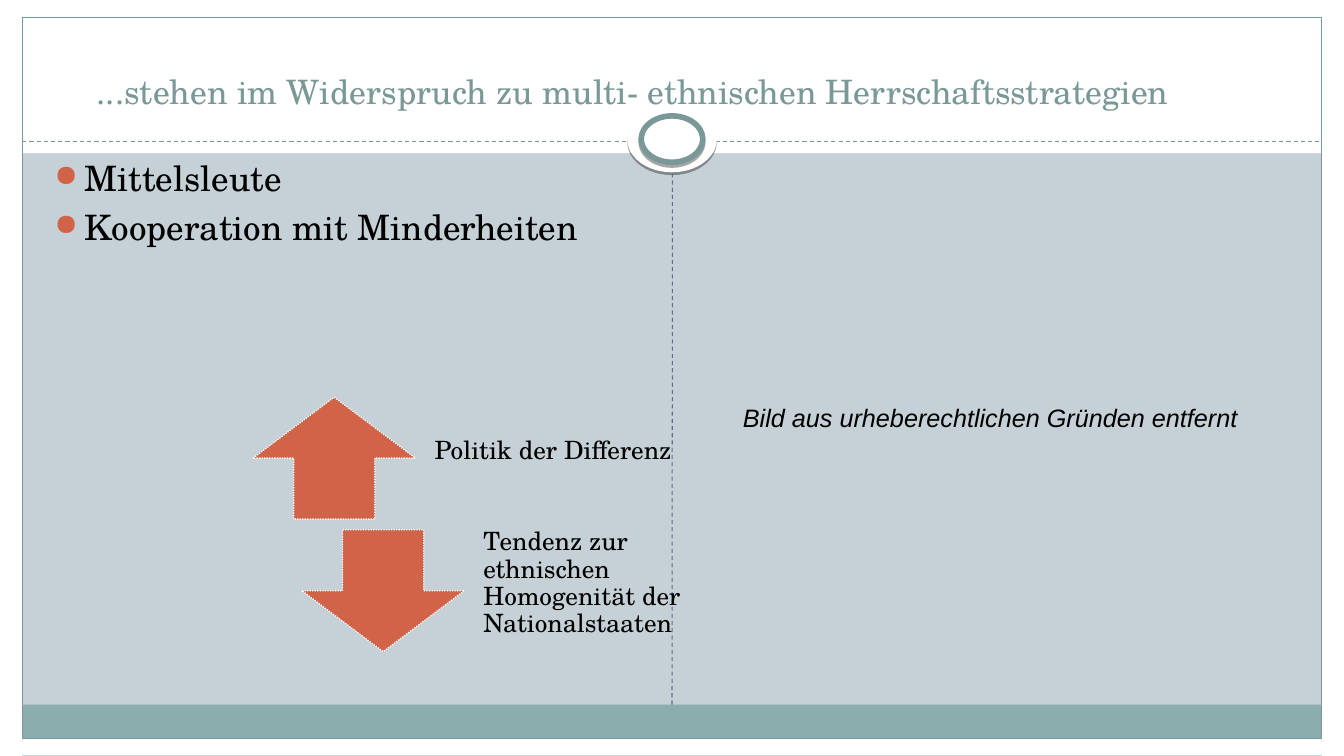
from lxml.etree import SubElement
from pptx import Presentation
from pptx.dml.color import RGBColor
from pptx.enum.dml import MSO_LINE
from pptx.enum.shapes import MSO_CONNECTOR, MSO_SHAPE
from pptx.enum.text import MSO_ANCHOR, MSO_AUTO_SIZE, PP_ALIGN
from pptx.oxml.ns import qn
from pptx.util import Inches, Pt

TITLE = "...stehen im Widerspruch zu multi- ethnischen Herrschaftsstrategien "
POINTS = ["Mittelsleute", "Kooperation mit Minderheiten"]
TRENDS = [
    (MSO_SHAPE.UP_ARROW, "Politik der Differenz"),
    (MSO_SHAPE.DOWN_ARROW, "Tendenz zur ethnischen Homogenität der Nationalstaaten"),
]
NOTE = "Bild aus urheberechtlichen Gründen entfernt"

HEX = {"back": "C5D1D7", "white": "FFFFFF", "black": "000000", "bar": "8CADAE",
       "teal": "7B9899", "slate": "646B86", "red": "D16349"}
SERIF = "TeX Gyre Schola"
WIDE, HIGH = 13.33, 7.5
EDGE = 0.22
INNER = WIDE - 2 * EDGE
BANDS = [
    (0, 7.33, WIDE, 0.16),
    (0, 0, WIDE, 1.52),
    (0, 0, EDGE, HIGH),
    (WIDE - EDGE, 0, EDGE, HIGH),
]
RINGS = [((6.22, 1.05, 0.89, 0.66), None, 0), ((6.36, 1.15, 0.61, 0.46), "teal", 4)]


def color(name):
    return RGBColor.from_string(HEX[name])


def apply(obj, vals):
    for key, val in vals.items():
        setattr(obj, key, val)


def stroke(line, name, width, dash=None):
    line.color.rgb = color(name)
    apply(line, {"width": Pt(width), "dash_style": dash})


def shape(kind, box, fill=None, edge=None, width=0.75, dash=None):
    item = slide.shapes.add_shape(kind, *map(Inches, box))
    item.shadow.inherit = False
    if fill:
        item.fill.solid()
        item.fill.fore_color.rgb = color(fill)
    else:
        item.fill.background()
    if edge:
        stroke(item.line, edge, width, dash)
    else:
        item.line.fill.background()
    return item


def shade(item):
    effect = item._element.spPr.find(qn("a:effectLst"))
    outer = SubElement(effect, qn("a:outerShdw"), blurRad="0", dist=str(Pt(2)),
                       dir="5400000", algn="ctr", rotWithShape="0")
    tint = SubElement(outer, qn("a:srgbClr"), val=HEX["black"])
    SubElement(tint, qn("a:alpha"), val="35000")


def rule(start, end, name):
    item = slide.shapes.add_connector(MSO_CONNECTOR.STRAIGHT, *map(Inches, start + end))
    stroke(item.line, name, 0.75, MSO_LINE.DASH)
    SubElement(item._element.spPr, qn("a:effectLst"))
    return item


def write(box, lines, size, font=SERIF, tone="black", italic=False, pads=(0.1, 0.05, 0.1, 0.05),
          frame={}, para={}):
    area = slide.shapes.add_textbox(*map(Inches, box)).text_frame
    sides = ("margin_left", "margin_top", "margin_right", "margin_bottom")
    apply(area, {"word_wrap": True, **dict(zip(sides, map(Inches, pads))), **frame})
    for num, text in enumerate(lines):
        part = area.add_paragraph() if num else area.paragraphs[0]
        apply(part, para)
        run = part.add_run()
        run.text = text
        apply(run.font, {"name": font, "size": Pt(size), "italic": italic})
        run.font.color.rgb = color(tone)
    return area


def bullet(part):
    props = part._p.get_or_add_pPr()
    props.set("marL", str(Inches(0.3)))
    props.set("indent", str(-Inches(0.3)))
    tint = SubElement(props, qn("a:buClr"))
    SubElement(tint, qn("a:srgbClr"), val=HEX["red"])
    SubElement(props, qn("a:buSzPct"), val="85000")
    SubElement(props, qn("a:buChar"), char="●")


deck = Presentation()
apply(deck, {"slide_width": Inches(WIDE), "slide_height": Inches(HIGH)})
slide = deck.slides.add_slide(deck.slide_layouts[6])
slide.background.fill.solid()
slide.background.fill.fore_color.rgb = color("back")

for box in BANDS:
    shape(MSO_SHAPE.RECTANGLE, box, "white")
foot = shape(MSO_SHAPE.RECTANGLE, (EDGE, 6.99, INNER, 0.34), "bar")
shape(MSO_SHAPE.RECTANGLE, (EDGE, 0.17, INNER, 7.16), None, "teal")
rule((EDGE, 1.4), (EDGE + INNER, 1.4), "teal")
for box, edge, width in RINGS:
    shade(shape(MSO_SHAPE.OVAL, box, "white", edge, width))
rule((WIDE / 2, 6.99), (6.67, 1.72), "slate").begin_connect(foot, 0)

write((EDGE, 0.12, 12.2, 1.03), [TITLE], 24, tone="teal",
      frame={"vertical_anchor": MSO_ANCHOR.BOTTOM}, para={"alignment": PP_ALIGN.CENTER})
body = write((0.44, 1.5, 5.89, 5.12), POINTS, 25, para={"space_before": Pt(5)})
for part in body.paragraphs:
    bullet(part)

for num, (kind, text) in enumerate(TRENDS):
    left, top = 2.51 + 0.485 * num, 3.94 + 1.315 * num
    shape(kind, (left, top, 1.61, 1.21), "red", "white", 0.91, MSO_LINE.ROUND_DOT)
    write((left + 1.66, top, 2.85, 1.21), [text], 18, pads=(0.14, 0, 0.14, 0.14),
          frame={"vertical_anchor": MSO_ANCHOR.MIDDLE},
          para={"line_spacing": 0.9, "space_after": Pt(6.3)})

write((7.27, 3.94, 5.15, 0.4), [NOTE], 18, "Arial", italic=True,
      frame={"word_wrap": False, "auto_size": MSO_AUTO_SIZE.SHAPE_TO_FIT_TEXT})

deck.save("out.pptx")
